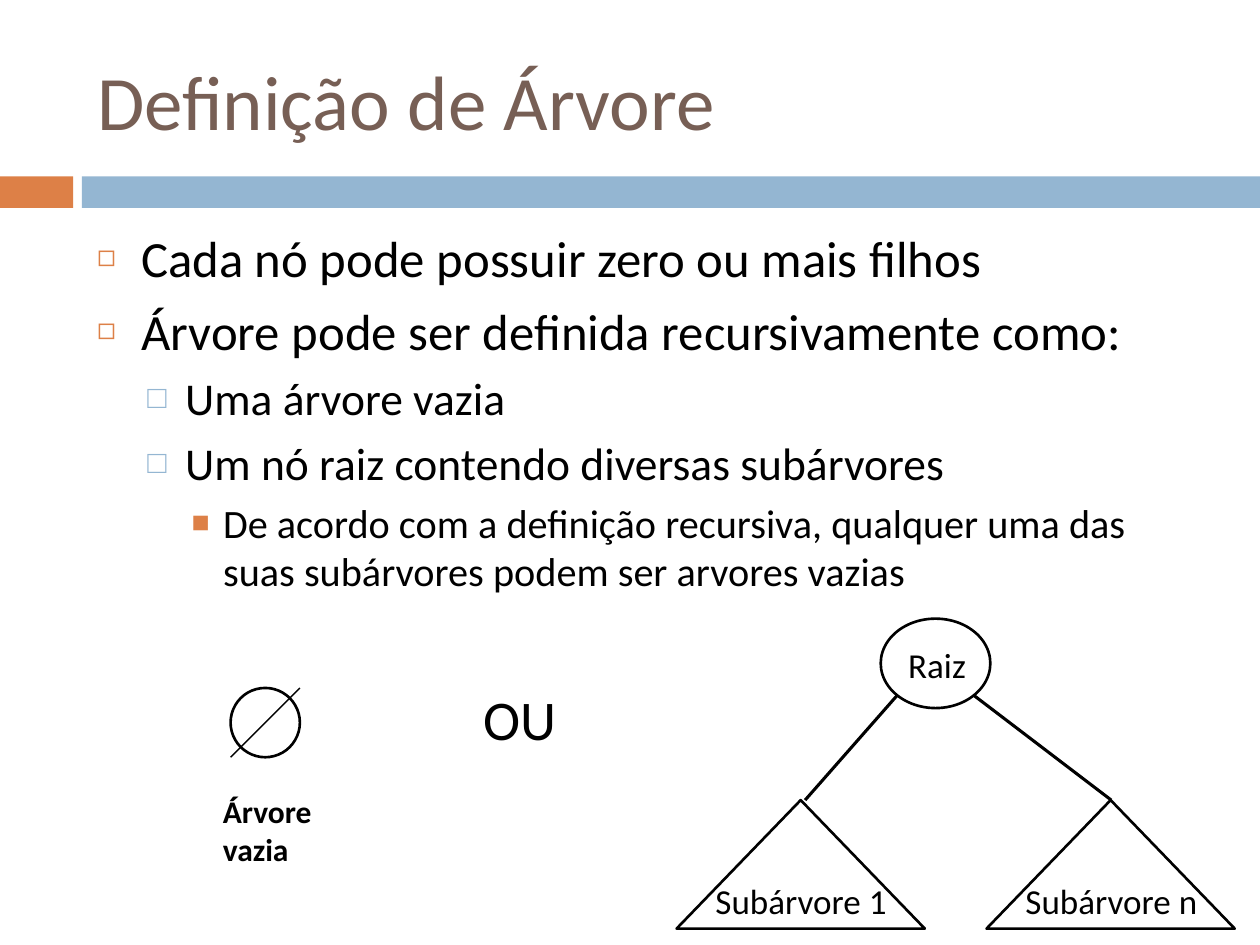
"""Build a slide that defines a tree recursively."""
from dataclasses import dataclass

from lxml import etree
from pptx import Presentation
from pptx.dml.color import RGBColor
from pptx.enum.shapes import MSO_CONNECTOR, MSO_SHAPE
from pptx.enum.text import MSO_ANCHOR, MSO_AUTO_SIZE, PP_ALIGN
from pptx.oxml.ns import qn
from pptx.util import Inches, Pt

RECT, OVAL, TRI = MSO_SHAPE.RECTANGLE, MSO_SHAPE.OVAL, MSO_SHAPE.ISOSCELES_TRIANGLE
LINE = MSO_CONNECTOR.STRAIGHT
LEFT, TOP, MIDDLE = PP_ALIGN.LEFT, MSO_ANCHOR.TOP, MSO_ANCHOR.MIDDLE
FIXED = MSO_AUTO_SIZE.NONE
COLORS = {"title": "775F55", "accent": "DD8047", "band": "94B6D2", "ink": "000000"}


@dataclass
class Level:
    """Look of one list level."""
    size: int
    left: float
    hang: float
    gap: float
    mark: str
    scale: int
    color: str


@dataclass
class Label:
    """Free text with its box."""
    text: str
    box: tuple
    size: int
    bold: bool = False


@dataclass
class Edge:
    """Straight line between two points."""
    start: tuple
    end: tuple
    width: float


LEVELS = [
    Level(29, 0.35, 0.35, 7, "◻", 60, "accent"),
    Level(26, 0.7, 0.3, 5.5, "□", 70, "band"),
    Level(23, 1, 0.25, 5, "■", 75, "accent"),
]
ITEMS = [
    (0, "Cada nó pode possuir zero ou mais filhos"),
    (0, "Árvore pode ser definida recursivamente como:"),
    (1, "Uma árvore vazia"),
    (1, "Um nó raiz contendo diversas subárvores"),
    (2, "De acordo com a definição recursiva, qualquer uma das "
        "suas subárvores podem ser arvores vazias"),
]
BARS = [((0, 1.4, 0.58, 0.25), "accent"), ((0.65, 1.4, 9.35, 0.25), "band")]
NODES = [(OVAL, (1.83, 5.46, 0.55, 0.55)), (OVAL, (6.99, 4.91, 0.87, 0.71))]
EDGES = [
    Edge((1.83, 6.01), (2.38, 5.46), 0.79),
    Edge((7.12, 5.52), (6.39, 6.35), 1.75),
    Edge((8.82, 6.35), (7.73, 5.52), 1.75),
]
LABELS = [
    Label("Árvore vazia", (1.67, 6.24, 1.02, 0.71), 18, True),
    Label("Raiz", (7.11, 5.06, 0.71, 0.44), 20),
    Label("OU", (3.74, 5.38, 1.02, 0.64), 32),
]
TREES = [("Subárvore 1", 5.37), ("Subárvore n", 7.83)]


def paint(name: str) -> RGBColor:
    """Look up a colour."""
    return RGBColor.from_string(COLORS[name])


def style(para, size: float, color: str = "ink", bold: bool = False) -> None:
    """Set the font of a paragraph."""
    para.alignment = LEFT
    font = para.font
    font.name, font.size, font.bold = "Calibri", Pt(size), bold
    font.color.rgb = paint(color)


def place(shape, box: tuple) -> None:
    """Move a placeholder to a box."""
    shape.left, shape.top, shape.width, shape.height = map(Inches, box)


def add_bar(slide, box: tuple, color: str) -> None:
    """Draw a filled bar."""
    bar = slide.shapes.add_shape(RECT, *map(Inches, box))
    bar.shadow.inherit = False
    bar.fill.solid()
    bar.fill.fore_color.rgb = paint(color)
    bar.line.fill.background()


def add_node(slide, kind, box: tuple) -> None:
    """Draw an outlined shape."""
    node = slide.shapes.add_shape(kind, *map(Inches, box))
    node.shadow.inherit = False
    node.fill.background()
    node.line.color.rgb = paint("ink")
    node.line.width = Pt(1.5)


def add_edge(slide, edge: Edge) -> None:
    """Draw a line without shadow."""
    line = slide.shapes.add_connector(LINE, *map(Inches, edge.start + edge.end))
    line.line.color.rgb = paint("ink")
    line.line.width = Pt(edge.width)
    etree.SubElement(line._element.spPr, qn("a:effectLst"))


def add_label(slide, label: Label) -> None:
    """Write a text box."""
    frame = slide.shapes.add_textbox(*map(Inches, label.box)).text_frame
    frame.word_wrap = True
    frame.text = label.text
    style(frame.paragraphs[0], label.size, bold=label.bold)


def add_mark(para, level: Level) -> None:
    """Give a paragraph its bullet and indent."""
    props = para._p.get_or_add_pPr()
    props.set("marL", str(Inches(level.left)))
    props.set("indent", str(-Inches(level.hang)))
    tint = etree.SubElement(props, qn("a:buClr"))
    etree.SubElement(tint, qn("a:srgbClr"), val=COLORS[level.color])
    etree.SubElement(props, qn("a:buSzPct"), val=str(level.scale * 1000))
    etree.SubElement(props, qn("a:buChar"), char=level.mark)


def fill_title(shape) -> None:
    """Write the slide title."""
    place(shape, (0.67, 0.25, 8.92, 1.08))
    frame = shape.text_frame
    frame.text = "Definição de Árvore"
    frame.auto_size, frame.vertical_anchor = FIXED, MIDDLE
    style(frame.paragraphs[0], 44, "title")


def fill_body(shape) -> None:
    """Write the list."""
    place(shape, (0.67, 1.75, 8.92, 4.92))
    frame = shape.text_frame
    frame.text = "\n".join(text for _, text in ITEMS)
    frame.auto_size, frame.vertical_anchor = FIXED, TOP
    for para, (depth, _) in zip(frame.paragraphs, ITEMS):
        level = LEVELS[depth]
        para.level = depth
        para.space_before = Pt(level.gap)
        add_mark(para, level)
        style(para, level.size)


def main() -> None:
    """Build and save the slide."""
    deck = Presentation()
    deck.slide_width, deck.slide_height = Inches(10), Inches(7.5)
    slide = deck.slides.add_slide(deck.slide_layouts[1])
    for box, color in BARS:
        add_bar(slide, box, color)
    fill_title(slide.shapes.title)
    fill_body(slide.placeholders[1])
    for kind, box in NODES:
        add_node(slide, kind, box)
    for edge in EDGES:
        add_edge(slide, edge)
    for text, left in TREES:
        add_node(slide, TRI, (left, 6.35, 1.97, 1.02))
        add_label(slide, Label(text, (left + 0.21, 6.93, 1.72, 0.44), 20))
    for label in LABELS:
        add_label(slide, label)
    deck.save("out.pptx")


if __name__ == "__main__":
    main()
